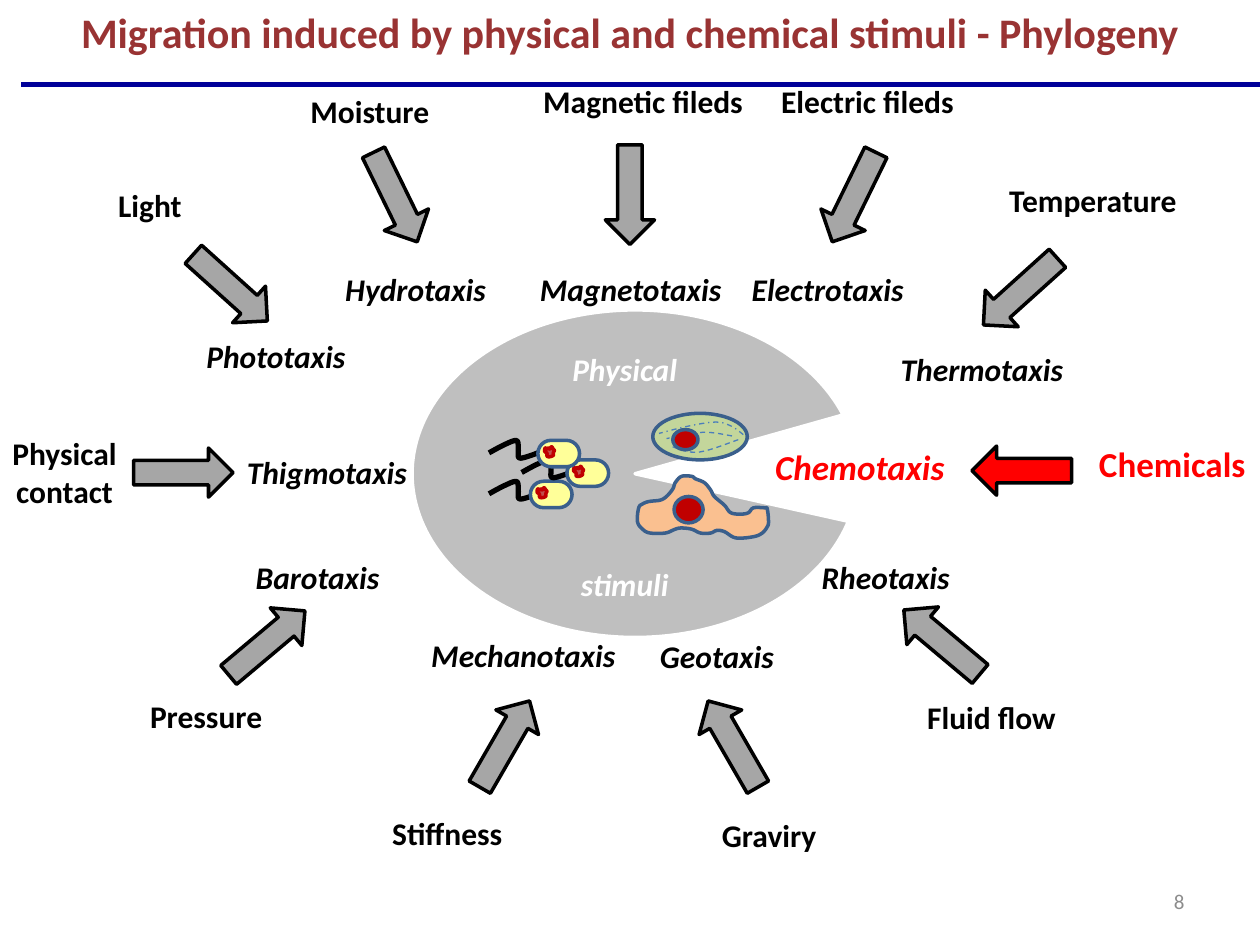
from pptx import Presentation
from pptx.dml.color import RGBColor
from pptx.enum.dml import MSO_LINE
from pptx.enum.shapes import MSO_CONNECTOR, MSO_SHAPE
from pptx.enum.text import MSO_ANCHOR, MSO_AUTO_SIZE, PP_ALIGN
from pptx.oxml import parse_xml
from pptx.oxml.ns import nsdecls
from pptx.util import Pt

THEME = {
    "font": "Calibri", "title": 24, "key": 20, "body": 18, "small": 12,
    "black": "000000", "white": "FFFFFF", "red": "FF0000", "brown": "993333",
    "navy": "000099", "grey": "A6A6A6", "pale": "BFBFBF", "page": "8C8C8C",
    "edge": "3A5F8C", "fibre": "4B7EBC", "core": "C00000", "spot": "C0504D",
    "green": "C3D69B", "skin": "FAC090", "yellow": "FFFF99",
}
TITLE = "Migration induced by physical and chemical stimuli - Phylogeny"

# stimulus, (left, top, width), response, (left, top, width), arrow (left, top, turn)
STIMULI = [
    ("Moisture", (169.9, 49, 82.8), "Hydrotaxis", (189.6, 150.8, 95.8), (211.9, 84.2, 334)),
    ("Magnetic fileds", (302.7, 43.2, 129.6), "Magnetotaxis", (300.6, 150.8, 119.5), (345.9, 82.8, 0)),
    ("Electric fileds", (438.8, 43.2, 113.8), "Electrotaxis", (422.2, 150.8, 101.5), (474, 84.2, 26)),
    ("Temperature", (569.1, 100.1, 110.9), "Thermotaxis", (507.1, 196.6, 108), (569.1, 138.2, 48)),
    ("Light", (60.1, 103, 51.1), "Phototaxis", (110.5, 189, 94.3), (117.6, 135.9, 312)),
    ("Chemicals", (620.6, 249.5, 98.6), "Chemotaxis", (435.2, 250.9, 112.3), (569.8, 240.5, 90)),
    ("Physical\ncontact", (0, 244.5, 73.8), "Thigmotaxis", (133.5, 255.6, 106.6), (90.7, 241.6, 270)),
    ("Stiffness", (216.3, 461.5, 78.5), "Mechanotaxis", (239, 360, 120.2), (274.3, 396.7, 210)),
    ("Graviry", (405, 463, 69.1), "Geotaxis", (369.7, 360.7, 79.9), (404.8, 396.7, 150)),
    ("Fluid flow", (522.3, 395.6, 88.6), "Rheotaxis", (461.8, 315.4, 88.6), (524.2, 338.4, 130)),
    ("Pressure", (78.2, 394.6, 79.2), "Barotaxis", (138.6, 315.4, 85.7), (138.4, 338.9, 230)),
]
KEY = "Chemicals"
CENTRE = [("Physical", (312.7, 196.6, 88.6)), ("stimuli", (312.7, 319.2, 88.6))]

AMOEBA = [
    (395.3, 272.2), (389.5, 272.2), (385.9, 275.8), (384.5, 279.4), (380.9, 283.7),
    (377.3, 285.8), (370.8, 286.6), (367.2, 288), (365, 290.2), (364.3, 298.1),
    (367.2, 302.4), (371.5, 304.6), (380.2, 304.6), (385.9, 302.4), (389.5, 301.7),
    (395.3, 302.4), (400.3, 304.6), (406.1, 304.6), (409.7, 303.1), (414, 303.8),
    (420.5, 307.4), (430.6, 306.7), (435.6, 304.6), (438.5, 301), (439.2, 298),
    (438.5, 290.9), (437, 290.2), (430.6, 290.2), (427.7, 293), (423.4, 293.8),
    (417.6, 293), (414, 288.7), (408.2, 283.7), (406.1, 280), (402.5, 275.8), (397.4, 273.6),
]
FIBRES = [
    ([(424.8, 248.4), (418, 243.6), (409, 241.2), (393, 243.6), (376.6, 247.7)], MSO_LINE.DASH_DOT),
    ([(418.3, 249.1), (401.8, 247), (380.9, 250.6)], MSO_LINE.DASH),
    ([(421.9, 251.3), (398.9, 258.5), (383, 254.9)], MSO_LINE.DASH),
]
TAIL = [(0, 7.2), (9.3, 2.3), (15.8, 0.2), (16.8, 5), (17.3, 10.1), (24.2, 8.6), (29.5, 6.5)]
SPOT = [
    (1.4, 1.4), (0.4, 0.8), (0, 2.4), (0.6, 3.2), (1.4, 3.8), (1.5, 5.5), (3, 5.8), (5, 5),
    (5, 3.6), (5.6, 2.2), (5, 1.4), (4.2, 0.2), (3.6, 0.4), (3, 1.4), (2.2, 0.8),
]
# tail left, body left, top
MICROBES = [(279.4, 303.1, 275), (298.1, 324, 262.8), (279.4, 307.4, 251.6)]


def tint(name):
    return RGBColor.from_string(THEME[name])


def paint(shape, fill, line, width=2):
    shape.shadow.inherit = False
    if fill:
        shape.fill.solid()
        shape.fill.fore_color.rgb = tint(fill)
    else:
        shape.fill.background()
    shape.line.color.rgb = tint(line)
    shape.line.width = Pt(width)
    return shape


def preset(shapes, kind, box, fill, line):
    shape = shapes.add_shape(kind, *[Pt(v) for v in box])
    return paint(shape, fill, line)


def bend(points, closed):
    """Return a smooth path (Catmull-Rom) through the points."""
    if closed:
        ring = [points[-1], *points, *points[:2]]
    else:
        ring = [points[0], *points, points[-1]]
    path, steps = [points[0]], 5
    for a, b, c, d in zip(ring, ring[1:], ring[2:], ring[3:]):
        for step in range(1, steps + 1):
            t = step / steps
            path.append(tuple(
                (2 * q + (r - p) * t + (2 * p - 5 * q + 4 * r - s) * t ** 2
                 + (3 * q - p - 3 * r + s) * t ** 3) / 2
                for p, q, r, s in zip(a, b, c, d)))
    return path


def curve(shapes, points, fill, line, width=2, left=0, top=0):
    path = [(Pt(left + x), Pt(top + y)) for x, y in bend(points, bool(fill))]
    pen = shapes.build_freeform(*path[0], scale=1.0)
    pen.add_line_segments(path[1:], close=bool(fill))
    return paint(pen.convert_to_shape(), fill, line, width)


def label(shapes, text, spot, size="body", color="black", bold=True,
          italic=False, align=PP_ALIGN.CENTER):
    left, top, width = spot
    lines = text.split("\n")
    high = THEME[size] * 1.2 * len(lines) + 7.2
    box = shapes.add_textbox(Pt(left), Pt(top), Pt(width), Pt(high))
    frame = box.text_frame
    frame.word_wrap = False
    frame.auto_size = MSO_AUTO_SIZE.SHAPE_TO_FIT_TEXT
    frame.vertical_anchor = MSO_ANCHOR.TOP
    for num, line in enumerate(lines):
        para = frame.add_paragraph() if num else frame.paragraphs[0]
        para.alignment = align
        run = para.add_run()
        run.text = line
        font = run.font
        font.name, font.size = THEME["font"], Pt(THEME[size])
        font.bold, font.italic = bold, italic
        font.color.rgb = tint(color)


def draw_cells(shapes):
    pie = preset(shapes, MSO_SHAPE.PIE, (269.3, 143.3, 187.2, 254.9), "pale", "white")
    pie.rotation = 90
    pie.adjustments[0], pie.adjustments[1] = 169.545, 152.54
    curve(shapes, AMOEBA, "skin", "edge")
    preset(shapes, MSO_SHAPE.OVAL, (385.2, 283.7, 16.6, 15.1), "core", "edge")
    preset(shapes, MSO_SHAPE.OVAL, (373, 236.2, 54, 26.6), "green", "edge")
    for points, dash in FIBRES:
        curve(shapes, points, None, "fibre", 0.75).line.dash_style = dash
    preset(shapes, MSO_SHAPE.OVAL, (384.5, 245.5, 14.4, 11.5), "core", "edge")
    for tail, body, top in MICROBES:
        curve(shapes, TAIL, None, "black", 3, tail, top)
        box = (body, top, 23.8, 15.1)
        preset(shapes, MSO_SHAPE.ROUNDED_RECTANGLE, box, "yellow", "edge").adjustments[0] = 0.5
        curve(shapes, SPOT, "spot", "core", 2, body + 3.8, top + 3.6)


def draw_stimuli(shapes):
    for cause, spot, taxis, place, (left, top, turn) in STIMULI:
        key = cause == KEY
        arrow = preset(shapes, MSO_SHAPE.DOWN_ARROW, (left, top, 28.1, 56.9),
                       "red" if key else "grey", "black")
        arrow.rotation = turn
        look = {"size": "key", "color": "red"} if key else {}
        label(shapes, cause, spot, **look)
        label(shapes, taxis, place, italic=True, **look)
    for word, spot in CENTRE:
        label(shapes, word, spot, color="white", italic=True)


def main():
    deck = Presentation()
    deck.slide_width, deck.slide_height = Pt(720), Pt(540)
    shapes = deck.slides.add_slide(deck.slide_layouts[6]).shapes
    draw_cells(shapes.add_group_shape().shapes)
    draw_stimuli(shapes)
    label(shapes, "8", (516.2, 504, 167.8), "small", "page", False, align=PP_ALIGN.RIGHT)
    label(shapes, TITLE, (36, 0, 648), "title", "brown")
    rule = shapes.add_connector(MSO_CONNECTOR.STRAIGHT, Pt(12.2), Pt(48.2), Pt(720), Pt(48.2))
    rule.line.color.rgb = tint("navy")
    rule.line.width = Pt(3)
    rule._element.spPr.append(parse_xml(f"<a:effectLst {nsdecls('a')}/>"))
    deck.save("out.pptx")


if __name__ == "__main__":
    main()
